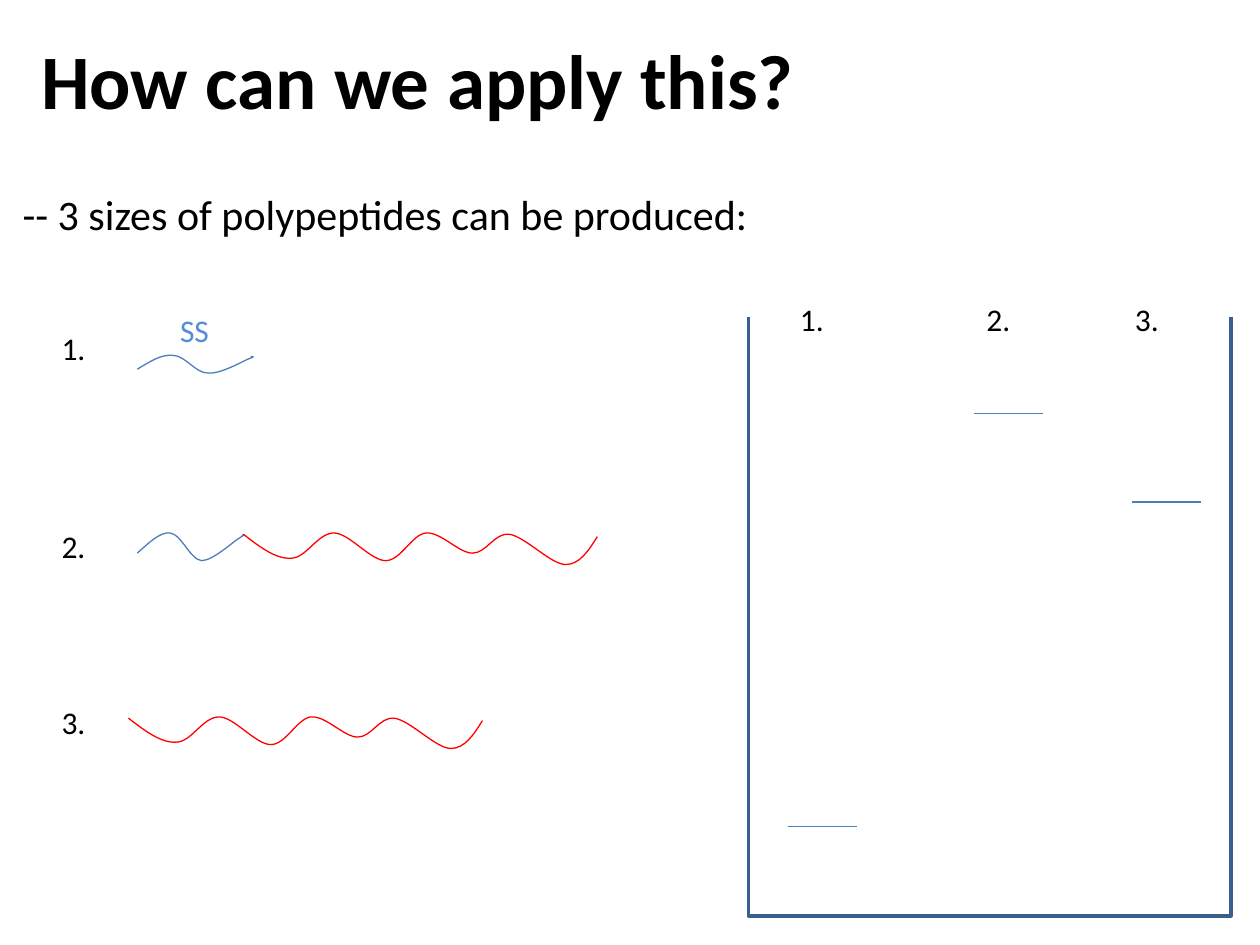
import pptx
import pptx.dml.color
import pptx.enum.shapes
import pptx.enum.text
import pptx.oxml.ns
import pptx.util
from lxml import etree

Pt = pptx.util.Pt
RGBColor = pptx.dml.color.RGBColor
BLACK = RGBColor(0x00, 0x00, 0x00)
WHITE = RGBColor(0xFF, 0xFF, 0xFF)
RED = RGBColor(0xFF, 0x00, 0x00)
BLUE = RGBColor(0x4B, 0x7E, 0xBC)
LIGHT_BLUE = RGBColor(0x55, 0x8E, 0xD5)
DARK_BLUE = RGBColor(0x3A, 0x5F, 0x8C)

presentation = pptx.Presentation()
presentation.slide_width = Pt(720)
presentation.slide_height = Pt(540)
slide = presentation.slides.add_slide(presentation.slide_layouts[6])


def add_text(text, left, top, width, height=28.8, size=18, color=BLACK,
             bold=False, anchor=pptx.enum.text.MSO_ANCHOR.TOP):
    shape = slide.shapes.add_textbox(Pt(left), Pt(top), Pt(width), Pt(height))
    shape.text_frame.word_wrap = True
    shape.text_frame.vertical_anchor = anchor
    run = shape.text_frame.paragraphs[0].add_run()
    run.text = text
    run.font.name = "Calibri"
    run.font.size = Pt(size)
    run.font.bold = bold
    run.font.color.rgb = color


def add_curve(left, top, controls, color):
    builder = slide.shapes.build_freeform(Pt(left), Pt(top))
    builder.add_line_segments(
        [(Pt(left + x), Pt(top + y)) for x, y in controls], close=False)
    shape = builder.convert_to_shape()
    shape.shadow.inherit = False
    shape.fill.background()
    shape.line.color.rgb = color
    shape.line.width = Pt(0.75)
    segments = list(shape._element.iter(pptx.oxml.ns.qn("a:lnTo")))
    for start in range(0, len(segments), 3):
        bezier = etree.Element(pptx.oxml.ns.qn("a:cubicBezTo"))
        segments[start].addprevious(bezier)
        for segment in segments[start:start + 3]:
            bezier.append(segment[0])
            segment.getparent().remove(segment)


add_text("How can we apply this?", 16.5, 0, 648, height=90, size=44, bold=True,
         anchor=pptx.enum.text.MSO_ANCHOR.MIDDLE)
add_text("-- 3 sizes of polypeptides can be produced:", 5.8, 104.4, 523.4,
         height=36, size=24)
add_text("SS", 95.8, 174.2, 33.8, color=LIGHT_BLUE)

for label, top in (("1.", 184.3), ("2.", 297.4), ("3.", 398.2)):
    add_text(label, 28.1, top, 45.4)

signal_alone = [
    (7.2, -4.3), (13.7, -8.6), (20.2, -7.9),
    (27.4, -7.9), (33.1, 2.2), (40.3, 2.2),
    (47.5, 2.9), (59.8, -4.3), (63.4, -5.8),
    (67.7, -7.2), (66.2, -7.2), (64.8, -7.2),
]
signal_attached = [
    (6.5, -5.8), (13, -12.2), (18.7, -11.5),
    (25.2, -10.8), (30.2, 3.6), (36.7, 4.3),
    (43.2, 4.3), (54.7, -6.5), (58.3, -8.6),
    (61.9, -10.8), (61.2, -10.8), (59.8, -10.1),
]
protein = [
    (9.4, 7.2), (18.7, 14.4), (27.4, 13.7),
    (36, 13.7), (42.5, -0.7), (51.8, -0.7),
    (60.5, -0.7), (72.7, 15.1), (81.4, 15.1),
    (90, 15.1), (96.5, 0), (104.4, -0.7),
    (113, -1.4), (123.1, 10.8), (131, 10.8),
    (139, 10.8), (143.3, -0.7), (151.9, 0),
    (161.3, 1.4), (175.7, 17.3), (184.3, 17.3),
    (192.2, 17.3), (197.3, 9.4), (202.3, 1.4),
]
add_curve(78.5, 211, signal_alone, BLUE)
add_curve(78.5, 316.1, signal_attached, BLUE)
add_curve(139, 305.3, protein, RED)
add_curve(73.4, 410.4, protein, RED)

gel_parts = (
    (427.7, 163.4, 275.8, 360, None, DARK_BLUE),
    (314.6, 157.7, 399.6, 22.3, WHITE, WHITE),
)
for left, top, width, height, fill, line in gel_parts:
    shape = slide.shapes.add_shape(
        pptx.enum.shapes.MSO_SHAPE.RECTANGLE,
        Pt(left), Pt(top), Pt(width), Pt(height))
    shape.shadow.inherit = False
    if fill is None:
        shape.fill.background()
    else:
        shape.fill.solid()
        shape.fill.fore_color.rgb = fill
    shape.line.color.rgb = line
    shape.line.width = Pt(2)

lanes = (
    ("1.", 450, 450, 472.3),
    ("2.", 556.6, 556.6, 236.2),
    ("3.", 641.5, 646.6, 286.8),
)
for label, label_left, band_left, band_top in lanes:
    add_text(label, label_left, 167.8, 45.4)
    band = slide.shapes.add_connector(
        pptx.enum.shapes.MSO_CONNECTOR.STRAIGHT,
        Pt(band_left), Pt(band_top), Pt(band_left + 39.6), Pt(band_top))
    band.line.color.rgb = BLUE
    band.line.width = Pt(0.75)
    etree.SubElement(band._element.spPr, pptx.oxml.ns.qn("a:effectLst"))

presentation.save("out.pptx")
